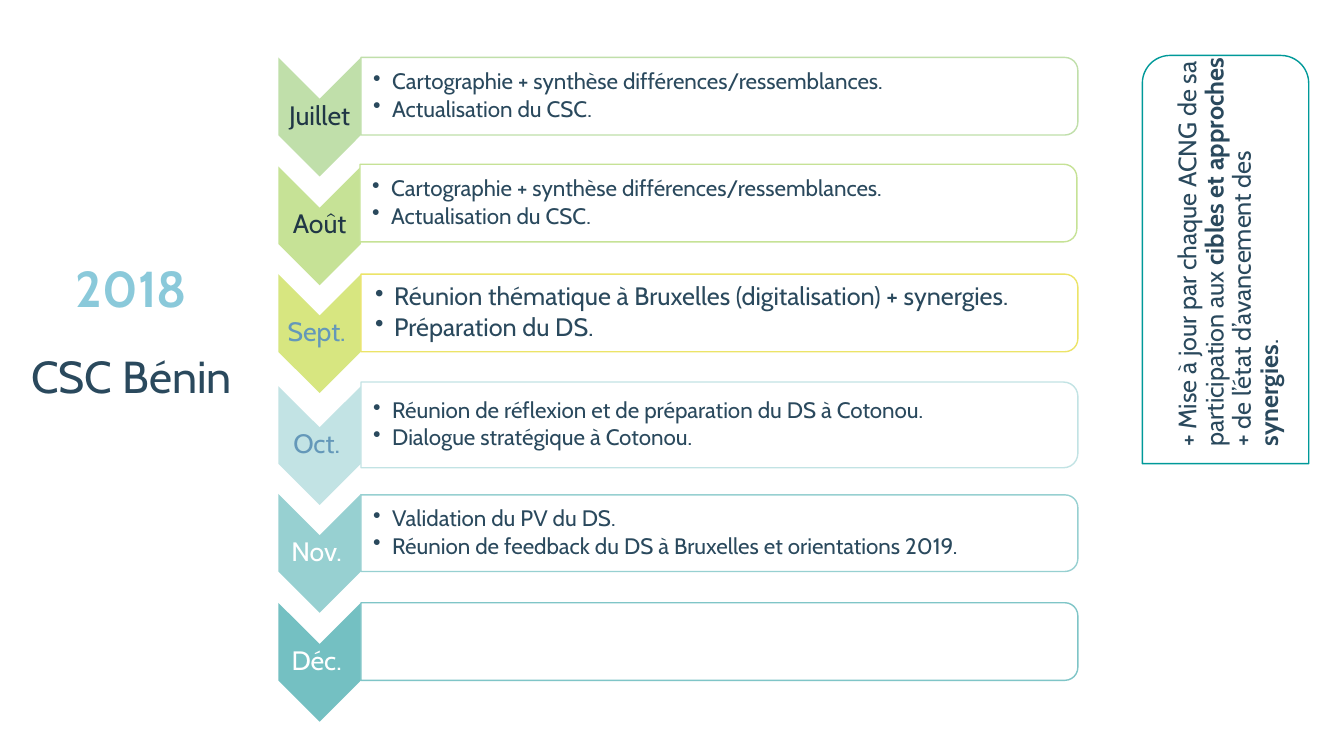
"""Build the 2018 month-by-month timeline slide for CSC Bénin."""
import pptx
import pptx.dml.color
import pptx.enum.shapes
import pptx.enum.text
import pptx.oxml
import pptx.oxml.ns
import pptx.util
import lxml.etree

Inches = pptx.util.Inches
Pt = pptx.util.Pt
KINDS = pptx.enum.shapes.MSO_SHAPE
ALIGN = pptx.enum.text.PP_ALIGN
INK = "2A495D"
DARK = "203746"
BLUE = "6498B9"
WHITE = "FFFFFF"


def color(code):
    return pptx.dml.color.RGBColor.from_string(code)


def place(x, y, w, h, turn):
    if turn in (90, 270):
        x, y, w, h = x + (w - h) / 2, y + (h - w) / 2, h, w
    return [Inches(v) for v in (x, y, w, h)]


class Board:
    def __init__(self, slide, face="Cabin"):
        self.slide = slide
        self.face = face

    def style(self, para, size, code, bold=None):
        font = para.font
        font.name, font.size, font.bold = self.face, Pt(size), bold
        font.color.rgb = color(code)
        para.line_spacing = 0.9

    def title(self, box, lines):
        shape = self.slide.shapes.title
        shape.left, shape.top, shape.width, shape.height = place(*box, 0)
        frame = shape.text_frame
        frame.auto_size = pptx.enum.text.MSO_AUTO_SIZE.NONE
        frame.vertical_anchor = pptx.enum.text.MSO_ANCHOR.MIDDLE
        for i, (words, size, code, bold, gap) in enumerate(lines):
            para = frame.add_paragraph() if i else frame.paragraphs[0]
            para.text = words
            para.alignment = ALIGN.CENTER
            para.space_before = Pt(gap)
            self.style(para, size, code, bold)

    def shape(self, kind, box, fill, line=None, turn=0):
        shape = self.slide.shapes.add_shape(kind, *place(*box, turn))
        shape.rotation = turn
        shape.shadow.inherit = False
        shape.fill.solid()
        shape.fill.fore_color.rgb = color(fill)
        if line:
            shape.line.color.rgb = color(line)
            shape.line.width = Pt(1)
        else:
            shape.line.fill.background()

    def text(self, box, paras, size, code, inset=0.01, turn=0,
             align=ALIGN.LEFT, bullet=False):
        shape = self.slide.shapes.add_textbox(*place(*box, turn))
        shape.rotation = turn
        frame = shape.text_frame
        frame.word_wrap = True
        frame.vertical_anchor = pptx.enum.text.MSO_ANCHOR.MIDDLE
        frame.margin_left = Inches(inset)
        frame.margin_top = frame.margin_right = frame.margin_bottom = Inches(0.01)
        for i, runs in enumerate(paras):
            para = frame.add_paragraph() if i else frame.paragraphs[0]
            for words, bold in runs:
                run = para.add_run()
                run.text = words
                if bold:
                    run.font.bold = True
            para.alignment = align
            para.space_after = Pt(round(size * 0.14, 1))
            if bullet:
                self.bullet(para)
            self.style(para, size, code)

    def bullet(self, para):
        props = para._p.get_or_add_pPr()
        props.set("marL", str(Inches(0.19)))
        props.set("indent", str(-Inches(0.19)))
        mark = lxml.etree.SubElement(props, pptx.oxml.ns.qn("a:buChar"))
        mark.set("char", "•")

    def month(self, name, ink, fill, line, top, box, items, size, inset):
        left, high, tall = box
        self.shape(KINDS.CHEVRON, (2.76, top, 0.82, 1.18), fill, turn=90)
        self.text((2.76, top + 0.41, 0.82, 0.35), [[(name, False)]], 19, ink,
                  align=ALIGN.CENTER)
        self.shape(KINDS.ROUND_2_SAME_RECTANGLE, (left, high, 7.11, tall),
                   WHITE, line, 90)
        if items:
            self.text((left, high + 0.04, 7.07, tall - 0.08),
                      [[(item, False)] for item in items], size, INK, inset,
                      bullet=True)


MAPPING = ["Cartographie + synthèse différences/ressemblances.",
           "Actualisation du CSC."]
MONTHS = [
    ("Juillet", DARK, "C0DFAA", "C0DFAA", 0.57, (3.58, 0.57, 0.77),
     MAPPING, 16, 0.12),
    ("Août", DARK, "C6E296", "C6E296", 1.65, (3.57, 1.63, 0.77),
     MAPPING, 16, 0.12),
    ("Sept. ", BLUE, "D7E680", "ECE468", 2.72, (3.58, 2.72, 0.77),
     ["Réunion thématique à Bruxelles (digitalisation) + synergies.",
      "Préparation du DS."], 18, 0.14),
    ("Oct. ", BLUE, "C2E3E4", "C2E3E4", 3.83, (3.58, 3.79, 0.85),
     ["Réunion de réflexion et de préparation du DS à Cotonou.",
      "Dialogue stratégique à Cotonou."], 16, 0.12),
    ("Nov. ", WHITE, "97D0D1", "97D0D1", 4.9, (3.58, 4.91, 0.76),
     ["Validation du PV du DS.",
      "Réunion de feedback du DS à Bruxelles et orientations 2019."], 16, 0.12),
    ("Déc. ", WHITE, "74C0C2", "7FC5C7", 5.98, (3.58, 5.98, 0.77), [], 16, 0.12),
]
UPDATE = [("+ Mise à jour par chaque ACNG de sa participation aux ", False),
          ("cibles et approches", True),
          (" + de l’état d’avancement des ", False),
          ("synergies", True), (".", False)]


def main():
    deck = pptx.Presentation()
    deck.slide_width, deck.slide_height = Inches(13.33), Inches(7.5)
    board = Board(deck.slides.add_slide(deck.slide_layouts[5]))
    board.title((0.17, 0, 2.27, 6.62),
                [("2018", 36, "8AC9DA", True, 0),
                 ("CSC Bénin", 32, INK, False, 26)])
    for month in MONTHS:
        board.month(*month)
    board.shape(KINDS.ROUND_2_SAME_RECTANGLE, (11.33, 0.55, 1.65, 4.05),
                WHITE, "009999")
    board.text((11.4, 0.56, 1.58, 4.03), [UPDATE], 18, INK, 0.16, 270)
    deck.save("out.pptx")


if __name__ == "__main__":
    main()
